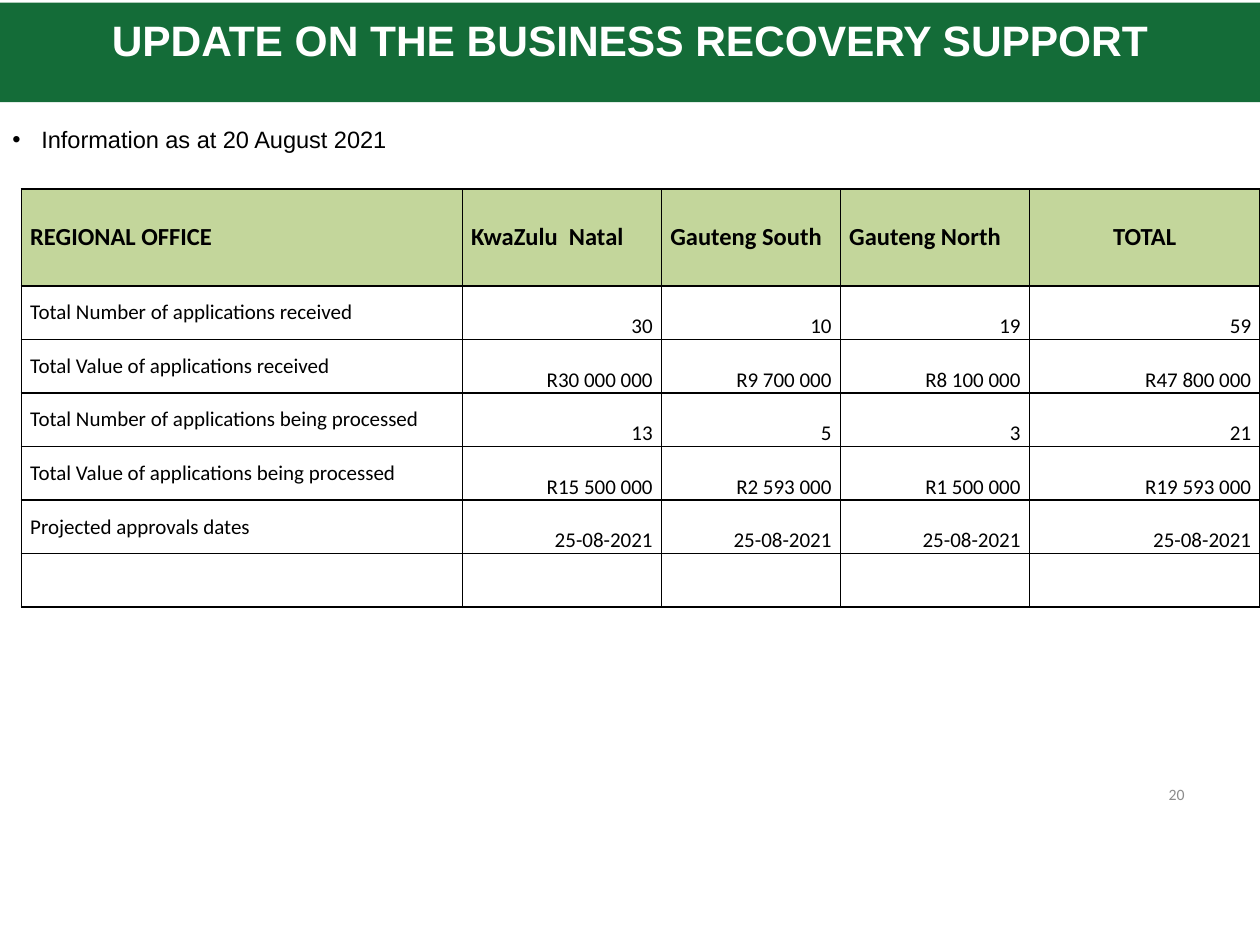
"""Build the business recovery support update slide."""
from lxml import etree
from pptx import Presentation
from pptx.dml.color import RGBColor
from pptx.enum.text import MSO_ANCHOR, MSO_AUTO_SIZE, PP_ALIGN
from pptx.oxml.ns import qn
from pptx.util import Inches, Pt

LEFT, CENTER, RIGHT = PP_ALIGN.LEFT, PP_ALIGN.CENTER, PP_ALIGN.RIGHT
JUSTIFY = PP_ALIGN.JUSTIFY
TOP, MIDDLE, BOTTOM = MSO_ANCHOR.TOP, MSO_ANCHOR.MIDDLE, MSO_ANCHOR.BOTTOM
NO_AUTOFIT = MSO_AUTO_SIZE.NONE
COLORS = {"green": "146C38", "header": "C3D69B", "white": "FFFFFF",
          "black": "000000", "grey": "8C8C8C"}
COL_WIDTHS = [3.5, 1.58, 1.42, 1.5, 1.83]
ROW_HEIGHTS = [0.77] + [0.425] * 6
ROWS = [
    ["REGIONAL OFFICE", "KwaZulu  Natal", "Gauteng South", "Gauteng North", "TOTAL"],
    ["Total Number of applications received", "30", "10", "19", "59"],
    ["Total Value of applications received",
     "R30 000 000", "R9 700 000", "R8 100 000", "R47 800 000"],
    ["Total Number of applications being processed", "13", "5", "3", "21"],
    ["Total Value of applications being processed",
     "R15 500 000", "R2 593 000", "R1 500 000", "R19 593 000"],
    ["Projected approvals dates"] + ["25-08-2021"] * 4,
    [""] * 5,
]


def rgb(name):
    return RGBColor.from_string(COLORS[name])


def write(tf, text, size=12, font="Calibri", color="black", bold=False, align=LEFT):
    p = tf.paragraphs[0]
    p.alignment = align
    p.font.size = Pt(size)
    if text:
        r = p.add_run()
        r.text = text
        r.font.size, r.font.name, r.font.bold = Pt(size), font, bold
        r.font.color.rgb = rgb(color)
    return p


def add_title(s, text):
    sp = s.shapes.title
    sp.left, sp.top, sp.width, sp.height = map(Inches, (0, 0.02, 10, 0.79))
    sp.fill.solid()
    sp.fill.fore_color.rgb = rgb("green")
    tf = sp.text_frame
    tf.auto_size = NO_AUTOFIT
    tf.vertical_anchor = TOP
    tf.margin_top = Inches(0.09)
    write(tf, text, size=24.3, font="Arial", color="white", bold=True, align=CENTER)


def add_textbox(s, box, text, anchor=TOP, **fmt):
    tf = s.shapes.add_textbox(*map(Inches, box)).text_frame
    tf.word_wrap = True
    tf.vertical_anchor = anchor
    return write(tf, text, **fmt)


def add_bullet(p, indent):
    pPr = p._p.get_or_add_pPr()
    pPr.set("marL", str(Inches(indent)))
    pPr.set("indent", str(-Inches(indent)))
    p.line_spacing = 1.5
    p.space_before = Pt(2.7)
    font = etree.Element(qn("a:buFont"), typeface="Arial")
    char = etree.Element(qn("a:buChar"), char="•")
    pPr.find(qn("a:spcBef")).addnext(font)
    font.addnext(char)


def add_borders(cell):
    tcPr = cell._tc.get_or_add_tcPr()
    for i, side in enumerate(("lnL", "lnR", "lnT", "lnB")):
        ln = etree.Element(qn(f"a:{side}"), w=str(Pt(1)))
        fill = etree.SubElement(ln, qn("a:solidFill"))
        etree.SubElement(fill, qn("a:srgbClr"), val=COLORS["black"])
        tcPr.insert(i, ln)


def format_cell(cell, text, row, col):
    header, label = row == 0, col == 0
    cell.margin_left = cell.margin_right = Inches(0.07)
    cell.margin_top = cell.margin_bottom = 0
    cell.vertical_anchor = MIDDLE if header or label else BOTTOM
    if header:
        cell.fill.solid()
        cell.fill.fore_color.rgb = rgb("header")
        align = CENTER if text == "TOTAL" else LEFT
    else:
        cell.fill.background()
        align = LEFT if label else RIGHT
    write(cell.text_frame, text, size=14 if header else 12, bold=header, align=align)
    add_borders(cell)


def add_regional_table(s):
    table = s.shapes.add_table(
        len(ROWS), len(COL_WIDTHS), Inches(0.17), Inches(1.5),
        Inches(sum(COL_WIDTHS)), Inches(sum(ROW_HEIGHTS))).table
    table.horz_banding = False
    for column, width in zip(table.columns, COL_WIDTHS):
        column.width = Inches(width)
    for i, (height, texts) in enumerate(zip(ROW_HEIGHTS, ROWS)):
        table.rows[i].height = Inches(height)
        for j, text in enumerate(texts):
            format_cell(table.cell(i, j), text, i, j)


def main():
    prs = Presentation()
    prs.slide_width, prs.slide_height = Inches(10), Inches(7.5)
    s = prs.slides.add_slide(prs.slide_layouts[5])
    add_title(s, "UPDATE ON THE BUSINESS RECOVERY SUPPORT")
    p = add_textbox(s, (0, 0.83, 9.75, 6.19), "Information as at 20 August 2021",
                    size=13.5, font="Arial", align=JUSTIFY)
    add_bullet(p, 0.23)
    add_textbox(s, (7.17, 6.15, 2.33, 0.3), "20", anchor=MIDDLE,
                size=9, color="grey", align=RIGHT)
    add_regional_table(s)
    prs.save("out.pptx")


if __name__ == "__main__":
    main()
